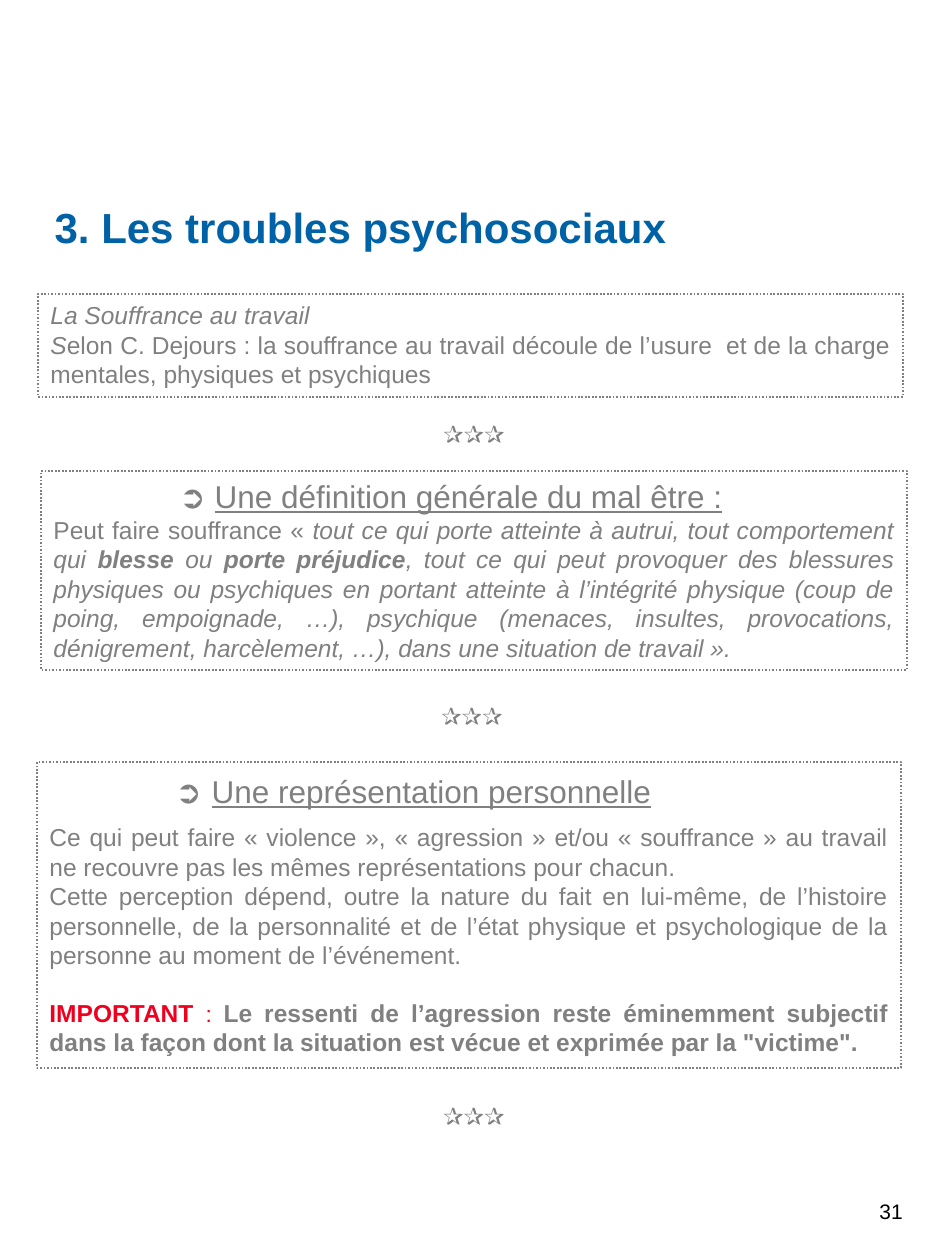
from pptx import Presentation
from pptx.dml.color import RGBColor
from pptx.enum.dml import MSO_LINE
from pptx.enum.shapes import MSO_SHAPE
from pptx.enum.text import MSO_ANCHOR, PP_ALIGN
from pptx.util import Emu, Pt

PX_PER_INCH = 126
DOTTED = MSO_LINE.ROUND_DOT
RECTANGLE = MSO_SHAPE.RECTANGLE
TOP = MSO_ANCHOR.TOP
LEFT, CENTER, JUSTIFY = PP_ALIGN.LEFT, PP_ALIGN.CENTER, PP_ALIGN.JUSTIFY

FONT = "Arial"
GREY, BLUE, RED, BLACK = "808080", "0062A6", "EF001F", "000000"
TITLE_ONLY = 5
STARS = "✰✰✰"


def px(length):
    return Emu(round(length * 914400 / PX_PER_INCH))


def color(hex_code):
    return RGBColor.from_string(hex_code)


def place(shape, left, top, width, height):
    shape.left, shape.top = px(left), px(top)
    shape.width, shape.height = px(width), px(height)


def add_span(para, text, size=14, hex_code=GREY, style=""):
    """Add a run; style holds any of b (bold), i (italic), u (underlined)."""
    span = para.add_run()
    span.text = text
    font = span.font
    font.name, font.size = FONT, Pt(size)
    font.color.rgb = color(hex_code)
    font.bold, font.italic, font.underline = (key in style for key in "biu")


def write_para(para, spans, align=JUSTIFY, before=0, indent=0):
    para.alignment = align
    para.space_before = Pt(before)
    if indent:
        para._p.get_or_add_pPr().set("marL", str(px(indent)))
    for span in spans:
        add_span(para, *span)


def write_paras(frame, paras):
    """Fill a text frame from dicts of write_para arguments."""
    frame.word_wrap = True
    frame.vertical_anchor = TOP
    for index, options in enumerate(paras):
        para = frame.add_paragraph() if index else frame.paragraphs[0]
        write_para(para, **options)


def add_title(page, text):
    title = page.shapes.title
    place(title, 42, 195, 861, 63)
    write_paras(title.text_frame,
                [dict(spans=[(text, 24, BLUE, "b")], align=LEFT)])


def add_label(page, area, *span, align=LEFT):
    box = page.shapes.add_textbox(*map(px, area))
    write_paras(box.text_frame, [dict(spans=[span], align=align)])


def add_dotted_box(page, area, paras):
    box = page.shapes.add_shape(RECTANGLE, *map(px, area))
    box.shadow.inherit = False
    box.fill.background()
    box.line.color.rgb = color(GREY)
    box.line.width = Pt(1)
    box.line.dash_style = DOTTED
    write_paras(box.text_frame, paras)


def heading(text, bullet_style="", gap_size=18, before=0):
    spans = [("➲", 18, GREY, bullet_style), (" ", gap_size),
             (text, 18, GREY, "u")]
    return dict(spans=spans, align=LEFT, before=before, indent=PX_PER_INCH)


def main():
    deck = Presentation()
    deck.slide_width, deck.slide_height = px(945), px(1260)
    page = deck.slides.add_slide(deck.slide_layouts[TITLE_ONLY])

    add_title(page, "3. Les troubles psychosociaux")

    add_dotted_box(page, (38, 294, 865, 103), [
        dict(spans=[("La Souffrance au travail", 14, GREY, "i")]),
        dict(spans=[
            ("S", 14, GREY, "i"),
            ("elon C. Dejours : la souffrance au travail découle de l’usure  "
             "et de la charge mentales, physiques et psychiques",)]),
    ])

    add_dotted_box(page, (41, 471, 866, 199), [
        heading("Une définition générale du mal être :", "b"),
        dict(spans=[
            ("Peut faire souffrance « ",),
            ("tout ce qui porte atteinte à autrui, tout comportement qui ",
             14, GREY, "i"),
            ("blesse", 14, GREY, "bi"),
            (" ou ", 14, GREY, "i"),
            ("porte préjudice", 14, GREY, "bi"),
            (", tout ce qui peut provoquer des blessures physiques ou "
             "psychiques en portant atteinte à l’intégrité physique (coup de "
             "poing, empoignade, …), psychique (menaces, insultes, "
             "provocations, dénigrement, harcèlement, …), dans une situation "
             "de travail ».", 14, GREY, "i")]),
    ])

    add_dotted_box(page, (37, 762, 864, 306), [
        heading("Une représentation personnelle", gap_size=20, before=2),
        dict(before=7, spans=[
            ("Ce qui peut faire « violence », « agression » et/ou "
             "« souffrance » au travail ne recouvre pas les mêmes "
             "représentations pour chacun.",)]),
        dict(spans=[
            ("Cette perception dépend, outre la nature du fait en lui-même, "
             "de l’histoire personnelle, de la personnalité et de l’état "
             "physique et psychologique de la personne au moment de "
             "l’événement.",)]),
        dict(before=16, spans=[
            ("IMPORTANT ", 14, RED, "b"),
            (": ", 13, RED),
            ("Le ressenti de l’agression reste éminemment subjectif dans la "
             "façon dont la situation est vécue et exprimée par la "
             "\"victime\".", 14, GREY, "b")]),
    ])

    for left, top in ((40, 413), (38, 695), (40, 1095)):
        add_label(page, (left, top, 868, 42), STARS, 14, GREY, "b",
                  align=CENTER)
    add_label(page, (867, 1192, 78, 68), "31", 12, BLACK)

    deck.save("out.pptx")


if __name__ == "__main__":
    main()
